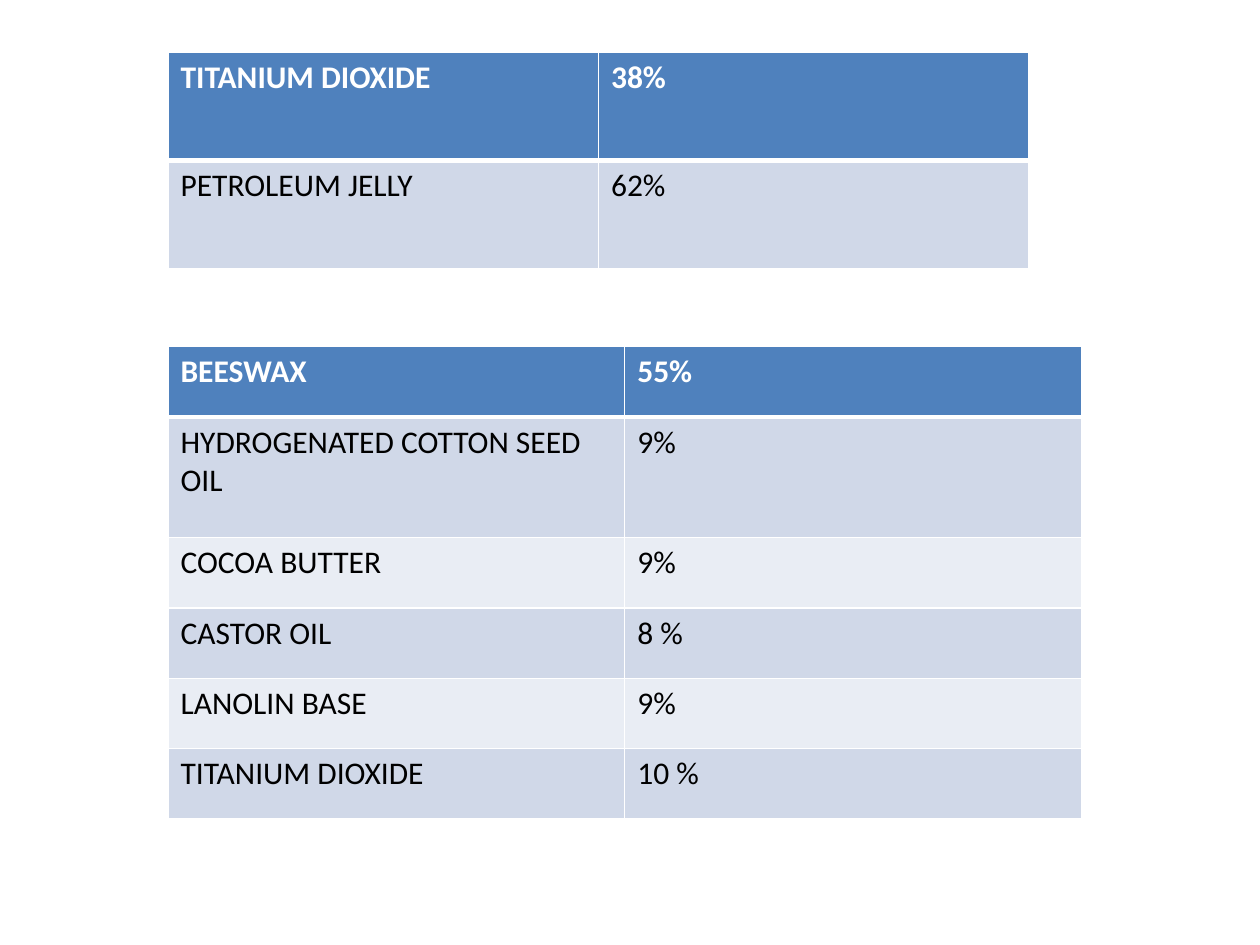
"""Build a slide with two tables of ingredient shares."""
from dataclasses import dataclass

from lxml import etree
from pptx import Presentation
from pptx.dml.color import RGBColor
from pptx.oxml.ns import qn
from pptx.util import Pt

PX = 7620
SIDES = ("a:lnL", "a:lnR", "a:lnT", "a:lnB")


@dataclass(frozen=True)
class Theme:
    font: str = "Calibri"
    size: int = 18
    head: str = "4F81BD"
    bands: tuple = ("E9EDF4", "D0D8E8")
    light: str = "FFFFFF"
    dark: str = "000000"
    thin: int = 1
    thick: int = 3


def write(frame, text, *, font, size, color, bold=False):
    para = frame.paragraphs[0]
    run = para.add_run()
    run.text = text
    run.font.name = font
    run.font.size = Pt(size)
    run.font.bold = bold
    run.font.color.rgb = RGBColor.from_string(color)


def edge(cell, widths, color):
    props = cell._tc.get_or_add_tcPr()
    for spot, (side, width) in enumerate(zip(SIDES, widths)):
        line = etree.Element(qn(side), w=str(Pt(width)))
        fill = etree.SubElement(line, qn("a:solidFill"))
        etree.SubElement(fill, qn("a:srgbClr"), val=color)
        props.insert(spot, line)


class Page:
    def __init__(self, slide, theme):
        self.slide = slide
        self.theme = theme

    def table(self, left, top, width, heights, rows):
        count = len(rows[0])
        frame = self.slide.shapes.add_table(
            len(rows), count, left * PX, top * PX,
            width * count * PX, sum(heights) * PX)
        grid = frame.table
        for col in grid.columns:
            col.width = width * PX
        for index, (height, row) in enumerate(zip(heights, rows)):
            grid.rows[index].height = height * PX
            for col, text in enumerate(row):
                self.cell(grid.cell(index, col), index, text)

    def cell(self, cell, index, text):
        look = self.theme
        head = index == 0
        cell.fill.solid()
        cell.fill.fore_color.rgb = RGBColor.from_string(
            look.head if head else look.bands[index % 2])
        above = look.thick if index == 1 else look.thin
        below = look.thick if head else look.thin
        edge(cell, (look.thin, look.thin, above, below), look.light)
        write(cell.text_frame, text, font=look.font, size=look.size,
              color=look.light if head else look.dark, bold=head)


def main():
    deck = Presentation()
    deck.slide_width, deck.slide_height = 1200 * PX, 900 * PX
    page = Page(deck.slides.add_slide(deck.slide_layouts[6]), Theme())
    page.table(160, 50, 410, [103, 103], [
        ("TITANIUM DIOXIDE", "38%"),
        ("PETROLEUM JELLY", "62%"),
    ])
    page.table(160, 330, 435, [67, 115] + [67] * 4, [
        ("BEESWAX", "55%"),
        ("HYDROGENATED COTTON SEED OIL", "9%"),
        ("COCOA BUTTER", "9%"),
        ("CASTOR OIL", "8 %"),
        ("LANOLIN BASE", "9%"),
        ("TITANIUM DIOXIDE", "10 %"),
    ])
    deck.save("out.pptx")


if __name__ == "__main__":
    main()
